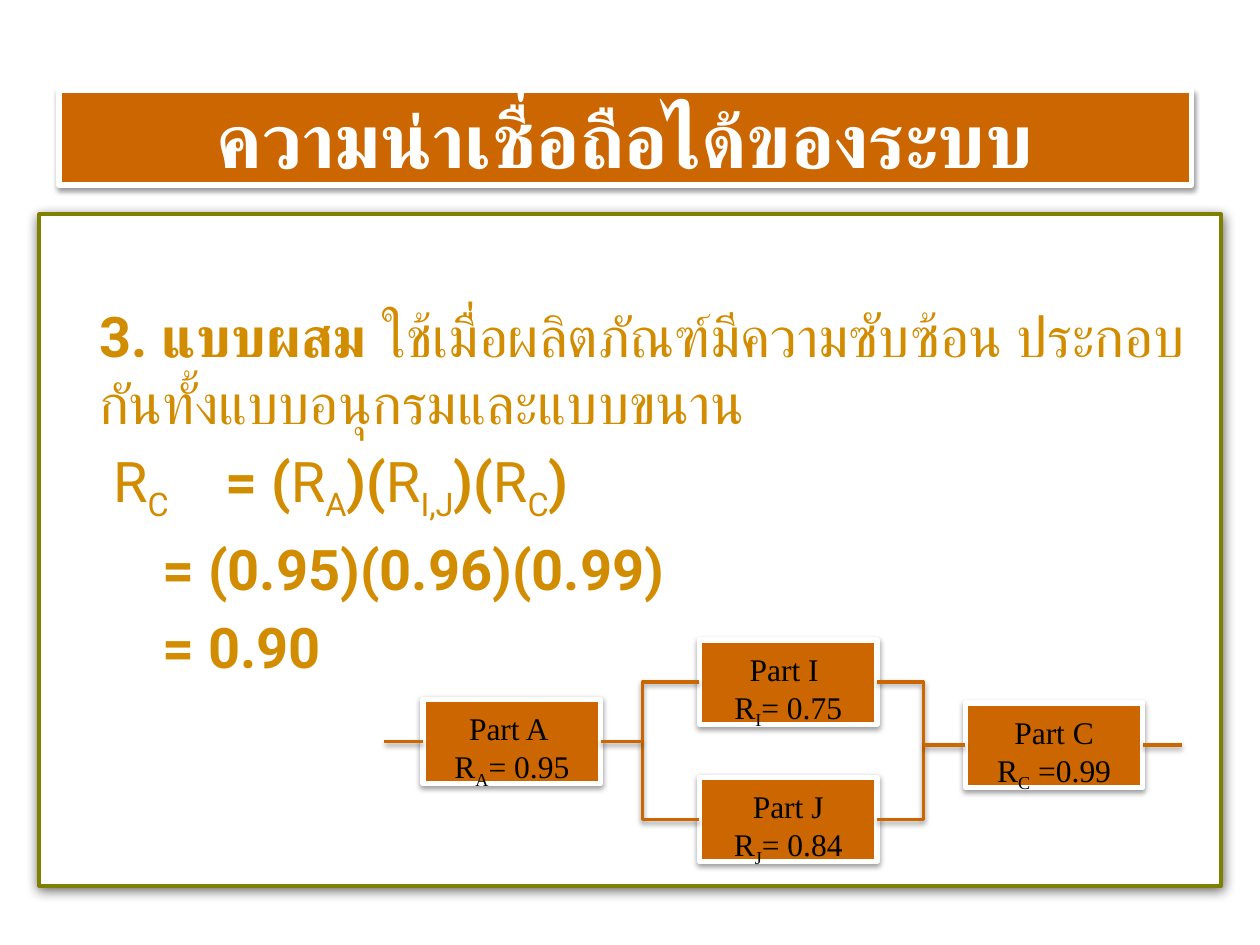
from lxml import etree
from pptx import Presentation
from pptx.dml.color import RGBColor
from pptx.enum.shapes import MSO_CONNECTOR, MSO_SHAPE
from pptx.enum.text import MSO_ANCHOR, PP_ALIGN
from pptx.oxml.ns import qn
from pptx.util import Cm, Pt

RECT, LINE = MSO_SHAPE.RECTANGLE, MSO_CONNECTOR.STRAIGHT
TOP, MID = MSO_ANCHOR.TOP, MSO_ANCHOR.MIDDLE
LEFT, MIDDLE = PP_ALIGN.LEFT, PP_ALIGN.CENTER

ORANGE = RGBColor(0xCC, 0x66, 0x00)
GOLD = RGBColor(0xD2, 0x8C, 0x00)
OLIVE = RGBColor(0x80, 0x80, 0x00)
WHITE = RGBColor(0xFF, 0xFF, 0xFF)
BLACK = RGBColor(0x00, 0x00, 0x00)
SANS, SERIF = "Roboto", "Times New Roman"

# Content: each run is (text, style); b is bold, s is subscript
TITLE = [[("ความน่าเชื่อถือได้ของระบบ", "b")]]
BODY = [
    [("\t", ""), ("3. แบบผสม ", "b"),
     ("ใช้เมื่อผลิตภัณฑ์มีความซับซ้อน ประกอบกันทั้งแบบอนุกรมและแบบขนาน", "")],
    [("\t", "b"), (" R", ""), ("C ", "s"), ("\t= (", "b"),
     ("R", ""), ("A", "s"), (")(", "b"),
     ("R", ""), ("I,J", "s"), (")(", "b"),
     ("R", ""), ("C", "s"), (")", "b")],
    [("\t\t= (0.95)(0.96)(0.99)", "b")],
    [("\t\t= 0.90", "b")],
]
# Part: heading, value, left, top
PARTS = {
    "I": ("Part I ", "= 0.75", 14.10, 12.90),
    "J": ("Part J", "= 0.84", 14.10, 15.67),
    "A": ("Part A ", "= 0.95", 8.53, 14.10),
    "C": ("Part C", " =0.99", 19.46, 14.17),
}
WIDE, HIGH = 3.58, 1.70
FORK, JOIN = 12.95, 18.62
# Lead: part, side of its box, far end
LEADS = [("A", 1, 7.75), ("A", 3, FORK), ("C", 1, JOIN), ("C", 3, 23.83)]


def shade(shape, blur=40000, alpha=38000):
    """Add a soft shadow below the shape."""
    effect = etree.SubElement(shape._element.spPr, qn("a:effectLst"))
    outer = etree.SubElement(effect, qn("a:outerShdw"), blurRad=str(blur),
                             dist="20000", dir="5400000", rotWithShape="0")
    color = etree.SubElement(outer, qn("a:srgbClr"), val="000000")
    etree.SubElement(color, qn("a:alpha"), val=str(alpha))


def stroke(shape, color, width):
    shape.line.color.rgb = color
    shape.line.width = Pt(width)


def add_box(place, fill, edge, width, **shadow):
    box = slide.shapes.add_shape(RECT, *map(Cm, place))
    box.fill.solid()
    box.fill.fore_color.rgb = fill
    stroke(box, edge, width)
    shade(box, **shadow)
    return box


def write(box, paras, size, face, color, align, anchor, top=0.13, gap=0, hang=0):
    frame = box.text_frame
    frame.word_wrap = True
    frame.vertical_anchor = anchor
    frame.margin_top = Cm(top)
    for i, runs in enumerate(paras):
        para = frame.paragraphs[0] if i == 0 else frame.add_paragraph()
        para.alignment = align
        if i:
            para.space_before = Pt(gap)
        if hang:
            props = para._p.get_or_add_pPr()
            props.set("marL", str(Cm(hang)))
            props.set("indent", str(-Cm(hang)))
        for text, style in runs:
            run = para.add_run()
            run.text = text
            font = run.font
            font.size, font.name, font.bold = Pt(size), face, "b" in style
            font.color.rgb = color
            if "s" in style:
                font._element.set("baseline", "-25000")


deck = Presentation()
deck.slide_width, deck.slide_height = Cm(25.4), Cm(19.05)
slide = deck.slides.add_slide(deck.slide_layouts[6])

# Title bar and text panel
bar = add_box((1.19, 1.83, 22.83, 1.90), ORANGE, WHITE, 3)
write(bar, TITLE, 44, SANS, WHITE, MIDDLE, MID)
panel = add_box((0.79, 4.32, 23.83, 13.54), WHITE, OLIVE, 2,
                blur=80000, alpha=60000)
write(panel, BODY, 32, SANS, GOLD, LEFT, TOP, top=1.75, gap=6.4, hang=0.96)

# Part boxes
boxes = {}
for name, (head, value, x, y) in PARTS.items():
    boxes[name] = add_box((x, y, WIDE, HIGH), ORANGE, WHITE, 3)
    lines = [[(head, "")], [("R", ""), (name, "s"), (value, "")]]
    write(boxes[name], lines, 18, SERIF, BLACK, MIDDLE, TOP, top=0.2)

# Brackets that tie the two parallel parts
first, last = (PARTS[name][3] + HIGH / 2 for name in "IJ")
near = PARTS["I"][2]
for edge, bus in ((near, FORK), (near + WIDE, JOIN)):
    pen = slide.shapes.build_freeform(Cm(edge), Cm(first))
    pen.add_line_segments([(Cm(bus), Cm(first)), (Cm(bus), Cm(last)),
                           (Cm(edge), Cm(last))], close=False)
    bracket = pen.convert_to_shape()
    bracket.fill.background()
    stroke(bracket, ORANGE, 2)
    shade(bracket)

# Leads in series
for name, side, end in LEADS:
    y = Cm(PARTS[name][3] + HIGH / 2)
    lead = slide.shapes.add_connector(LINE, Cm(end), y, Cm(end), y)
    lead.end_connect(boxes[name], side)
    stroke(lead, ORANGE, 2)
    shade(lead)

deck.save("out.pptx")
